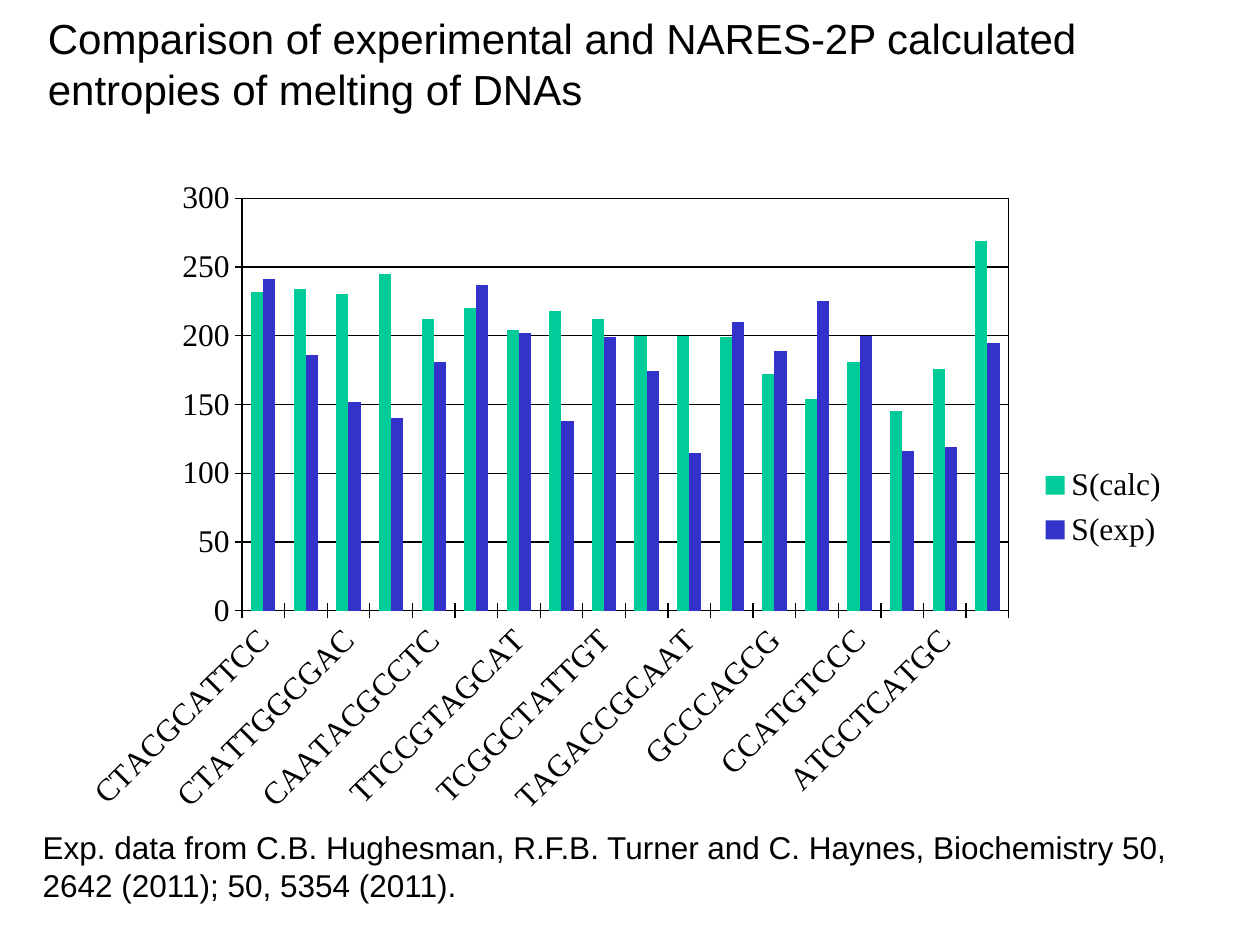
from dataclasses import dataclass

from pptx import Presentation
from pptx.chart.data import CategoryChartData
from pptx.dml.color import RGBColor
from pptx.enum.chart import XL_CHART_TYPE, XL_LEGEND_POSITION, XL_TICK_MARK
from pptx.enum.text import MSO_ANCHOR, MSO_AUTO_SIZE, PP_ALIGN
from pptx.oxml import parse_xml
from pptx.oxml.ns import nsdecls, qn
from pptx.util import Inches, Pt


@dataclass(frozen=True)
class Theme:
    ink: str = "000000"
    calc: str = "00CC99"
    exp: str = "3333CC"
    sans: str = "Arial"
    serif: str = "Times New Roman"
    head: int = 24
    body: int = 18
    rule: float = 0.75


THEME = Theme()

TITLE = ("Comparison of experimental and NARES-2P calculated "
         "entropies of melting of DNAs")
NOTE = ("Exp. data from C.B. Hughesman, R.F.B. Turner and C. Haynes, "
        "Biochemistry 50, 2642 (2011); 50, 5354 (2011).")

# Sequence, calculated and experimental entropy
DATA = [
    ("CTACGCATTCC", 232, 241), ("CTAACGGATGC", 234, 186),
    ("CTATTGGCGAC", 230, 152), ("CGTATTCAGGC", 245, 140),
    ("CAATACGCCTC", 212, 181), ("TTCATAGCCGT", 220, 237),
    ("TTCCGTAGCAT", 204, 202), ("TGCGGATAAGT", 218, 138),
    ("TCGGCTATTGT", 212, 199), ("TACTCCGCATT", 200, 174),
    ("TAGACCGCAAT", 200, 115), ("TATCGTTGCCT", 199, 210),
    ("GCCCAGCG", 172, 189), ("AGACCTAGT", 154, 225),
    ("CCATGTCCC", 181, 200), ("TGCACGCTA", 145, 116),
    ("ATGCTCATGC", 176, 119), ("CTCGGGAACGCC", 269, 195),
]


def set_font(font, size, face):
    font.size = Pt(size)
    font.name = face
    font.bold = False
    font.color.rgb = RGBColor.from_string(THEME.ink)


def set_line(line):
    line.color.rgb = RGBColor.from_string(THEME.ink)
    line.width = Pt(THEME.rule)


def put_text(shape, text, *, box, size, face=THEME.sans):
    """Place a text shape and fill it with one left-aligned paragraph."""
    shape.left, shape.top, shape.width, shape.height = map(Inches, box)
    frame = shape.text_frame
    frame.word_wrap = True
    frame.auto_size = MSO_AUTO_SIZE.NONE
    frame.vertical_anchor = MSO_ANCHOR.TOP
    frame.text = text
    para = frame.paragraphs[0]
    para.alignment = PP_ALIGN.LEFT
    set_font(para.runs[0].font, size, face)


def set_place(node, spot, box, inner=False):
    """Give a chart part a fixed place, in fractions of the chart."""
    for old in node.findall(qn("c:layout")):
        node.remove(old)
    target = '<c:layoutTarget val="inner"/>' if inner else ""
    modes = "".join(f'<c:{k}Mode val="edge"/>' for k in "xy")
    sizes = "".join(f'<c:{k} val="{v}"/>' for k, v in zip("xywh", box))
    node.insert(spot, parse_xml(
        f'<c:layout {nsdecls("c")}><c:manualLayout>{target}{modes}{sizes}'
        '</c:manualLayout></c:layout>'))


def style_axis(axis):
    axis.major_tick_mark = XL_TICK_MARK.CROSS
    axis.minor_tick_mark = XL_TICK_MARK.NONE
    set_line(axis.format.line)
    set_font(axis.tick_labels.font, THEME.body, THEME.serif)


def style_plot(chart):
    """Frame the plot area and fix where it stands."""
    area = chart._chartSpace.chart.plotArea
    set_place(area, 0, (0.16, 0.05, 0.69, 0.62), inner=True)
    area.append(parse_xml(
        f'<c:spPr {nsdecls("c", "a")}><a:noFill/>'
        f'<a:ln w="{Pt(THEME.rule)}"><a:solidFill>'
        f'<a:srgbClr val="{THEME.ink}"/></a:solidFill></a:ln></c:spPr>'))


def add_bars(slide, box):
    names, calc, exp = zip(*DATA)
    data = CategoryChartData()
    data.categories = names
    data.add_series("S(calc)", calc)
    data.add_series("S(exp)", exp)
    chart = slide.shapes.add_chart(
        XL_CHART_TYPE.COLUMN_CLUSTERED, *map(Inches, box), data).chart
    chart.has_title = False
    set_font(chart.font, THEME.body, THEME.serif)

    # Bars
    plot = chart.plots[0]
    plot.gap_width = 150
    plot.overlap = 0
    plot.vary_by_categories = False
    for series, color in zip(plot.series, (THEME.calc, THEME.exp)):
        series.invert_if_negative = False
        series.format.fill.solid()
        series.format.fill.fore_color.rgb = RGBColor.from_string(color)

    # Value axis
    value = chart.value_axis
    style_axis(value)
    value.minimum_scale, value.maximum_scale = 0, 300
    value.major_unit = 50
    set_line(value.major_gridlines.format.line)

    # Category axis: slanted labels, every second one shown
    cat = chart.category_axis
    style_axis(cat)
    node = cat._element
    node.find(qn("c:txPr")).find(qn("a:bodyPr")).set("rot", "-2700000")
    node.find(qn("c:noMultiLvlLbl")).addprevious(
        parse_xml(f'<c:tickLblSkip {nsdecls("c")} val="2"/>'))

    # Legend
    chart.has_legend = True
    legend = chart.legend
    legend.position = XL_LEGEND_POSITION.RIGHT
    legend.include_in_layout = False
    set_font(legend.font, THEME.body, THEME.serif)
    set_place(legend._element, 1, (0.87, 0.44, 0.13, 0.15))
    style_plot(chart)


def main():
    deck = Presentation()
    deck.slide_width, deck.slide_height = Inches(10), Inches(7.5)
    slide = deck.slides.add_slide(deck.slide_layouts[5])

    # Title, chart and source note
    put_text(slide.shapes.title, TITLE,
             box=(0.28, 0.05, 9.53, 0.91), size=THEME.head)
    add_bars(slide, (0.51, 1.31, 8.82, 5.28))
    box = (0.24, 6.52, 9.72, 0.71)
    note = slide.shapes.add_textbox(*map(Inches, box))
    put_text(note, NOTE, box=box, size=THEME.body)

    deck.save("out.pptx")


if __name__ == "__main__":
    main()
